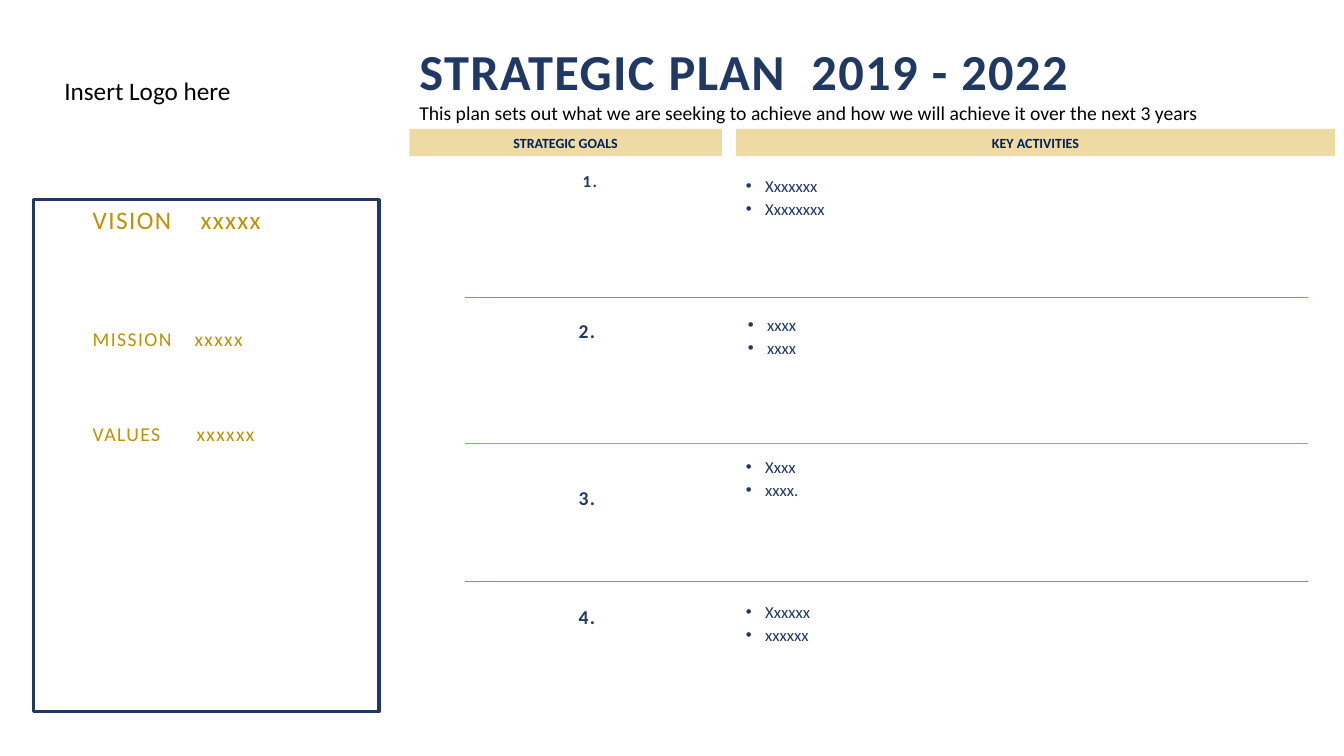
"""Build a one-page strategic plan with goals, activities and a vision panel."""
from lxml.etree import SubElement
from pptx import Presentation
from pptx.dml.color import RGBColor
from pptx.enum.shapes import MSO_CONNECTOR, MSO_SHAPE
from pptx.enum.text import MSO_ANCHOR, MSO_AUTO_SIZE, PP_ALIGN
from pptx.oxml.ns import qn
from pptx.util import Inches, Pt

COLORS = {"navy": "203864", "deep": "002060", "gold": "BF9000",
          "amber": "D69D07", "white": "FFFFFF", "black": "000000"}
TITLE = "STRATEGIC PLAN  2019 - 2022"
SUBTITLE = "This plan sets out what we are seeking to achieve and how we will achieve it over the next 3 years"
LOGO_NOTE = "Insert Logo here"
HEADINGS = [(" STRATEGIC GOALS ", 4.06, 3.1), ("KEY ACTIVITIES", 7.3, 5.94)]
GOALS = [
    {"number": "1.", "size": 12, "at": (1.64, 1.24),
     "activities": ["Xxxxxxx", "Xxxxxxxx"], "list_at": (7.3, 1.69, 1.19)},
    {"number": "2. ", "size": 14, "at": (3.11, 1.18),
     "activities": ["xxxx", "xxxx"], "list_at": (7.32, 3.07, 1.18)},
    {"number": "3. ", "size": 14, "at": (4.77, 0.62),
     "activities": ["Xxxx", "xxxx."], "list_at": (7.3, 4.48, 1.21)},
    {"number": "4. ", "size": 14, "at": (5.95, 0.57),
     "activities": ["Xxxxxx", "xxxxxx"], "list_at": (7.3, 5.92, 1.44)},
]
DIVIDERS = [(2.95, "gold", 0.25), (4.4, "amber", 0.25), (5.77, "gold", 0.5)]
PANEL = [("VISION\txxxxx", 18, 0, 1.07), ("MISSION\txxxxx", 14, 66, 1.01),
         ("VALUES\txxxxxx", 14, 51, 1.03)]


def rgb(name):
    return RGBColor.from_string(COLORS[name])


def write(shape, lines, size, color, bold=False, align=PP_ALIGN.LEFT,
          anchor=MSO_ANCHOR.TOP, before=0, tracking=0):
    frame = shape.text_frame
    frame.word_wrap = True
    frame.auto_size = MSO_AUTO_SIZE.NONE
    frame.vertical_anchor = anchor
    for index, line in enumerate(lines):
        para = frame.add_paragraph() if index else frame.paragraphs[0]
        span = para.add_run()
        span.text = line
        para.alignment = align
        para.space_before = Pt(before)
        para.font.name = "Calibri"
        para.font.size = Pt(size)
        para.font.bold = bold
        para.font.color.rgb = rgb(color)
        if tracking:
            span.font._element.set("spc", str(tracking * 100))
    return frame.paragraphs


def add_text(page, bounds, lines, size, color, **style):
    box = page.shapes.add_textbox(*map(Inches, bounds))
    return write(box, lines, size, color, **style)


def add_box(page, bounds, fill):
    box = page.shapes.add_shape(MSO_SHAPE.RECTANGLE, *map(Inches, bounds))
    box.shadow.inherit = False
    box.fill.solid()
    box.fill.fore_color.rgb = rgb(fill)
    box.line.fill.background()
    return box


def add_bullet(para):
    props = para._p.get_or_add_pPr()
    props.set("marL", str(Inches(0.19)))
    props.set("indent", str(-Inches(0.19)))
    SubElement(props, qn("a:buFont")).set("typeface", "Arial")
    SubElement(props, qn("a:buChar")).set("char", "•")
    default = props.find(qn("a:defRPr"))
    props.append(default)


def add_title(page):
    title = page.shapes.title
    title.left, title.top, title.width, title.height = map(Inches, (4.06, 0.34, 9.01, 0.71))
    title.fill.solid()
    title.fill.fore_color.rgb = rgb("white")
    write(title, [TITLE], 36, "navy", bold=True, anchor=MSO_ANCHOR.MIDDLE, tracking=1)
    title.text_frame.paragraphs[0].line_spacing = 1.0


def add_panel(page):
    panel = add_box(page, (0.33, 1.98, 3.43, 5.08), "white")
    panel.line.color.rgb = rgb("navy")
    panel.line.width = Pt(2.25)
    paras = write(panel, [text for text, *_ in PANEL], 14, "gold", tracking=1)
    panel.text_frame.margin_left = Inches(0.59)
    for para, (_, size, before, stop) in zip(paras, PANEL):
        para.font.size = Pt(size)
        para.space_before = Pt(before)
        props = para._p.get_or_add_pPr()
        tabs = SubElement(props, qn("a:tabLst"))
        tab = SubElement(tabs, qn("a:tab"))
        tab.set("pos", str(Inches(stop)))
        tab.set("algn", "l")
        props.append(props.find(qn("a:defRPr")))


def add_heading(page, text, left, width):
    bar = add_box(page, (left, 1.28, width, 0.27), "amber")
    color = bar.fill._xPr.find(qn("a:solidFill"))[0]
    SubElement(color, qn("a:alpha")).set("val", "37000")
    write(bar, [text], 10, "deep", bold=True, align=PP_ALIGN.CENTER, anchor=MSO_ANCHOR.MIDDLE)


def add_goal(page, goal):
    top, height = goal["at"]
    add_text(page, (4.54, top, 2.62, height), [goal["number"]], goal["size"], "navy",
             bold=True, align=PP_ALIGN.CENTER, tracking=1)
    left, top, height = goal["list_at"]
    for para in add_text(page, (left, top, 5.92, height), goal["activities"], 12, "navy", before=2):
        add_bullet(para)


def add_divider(page, top, color, width):
    line = page.shapes.add_connector(
        MSO_CONNECTOR.STRAIGHT, Inches(4.61), Inches(top), Inches(12.97), Inches(top))
    line.line.color.rgb = rgb(color)
    line.line.width = Pt(width)
    SubElement(line._element.spPr, qn("a:effectLst"))


def main():
    deck = Presentation()
    deck.slide_width, deck.slide_height = Inches(13.33), Inches(7.5)
    page = deck.slides.add_slide(deck.slide_layouts[5])
    add_title(page)
    add_panel(page)
    for goal in GOALS:
        add_goal(page, goal)
    for divider in DIVIDERS:
        add_divider(page, *divider)
    for heading in HEADINGS:
        add_heading(page, *heading)
    add_text(page, (0.54, 0.7, 2.9, 0.4), [LOGO_NOTE], 18, "black")
    add_text(page, (4.06, 0.95, 8.11, 0.34), [SUBTITLE], 14, "black")
    deck.save("out.pptx")


if __name__ == "__main__":
    main()
